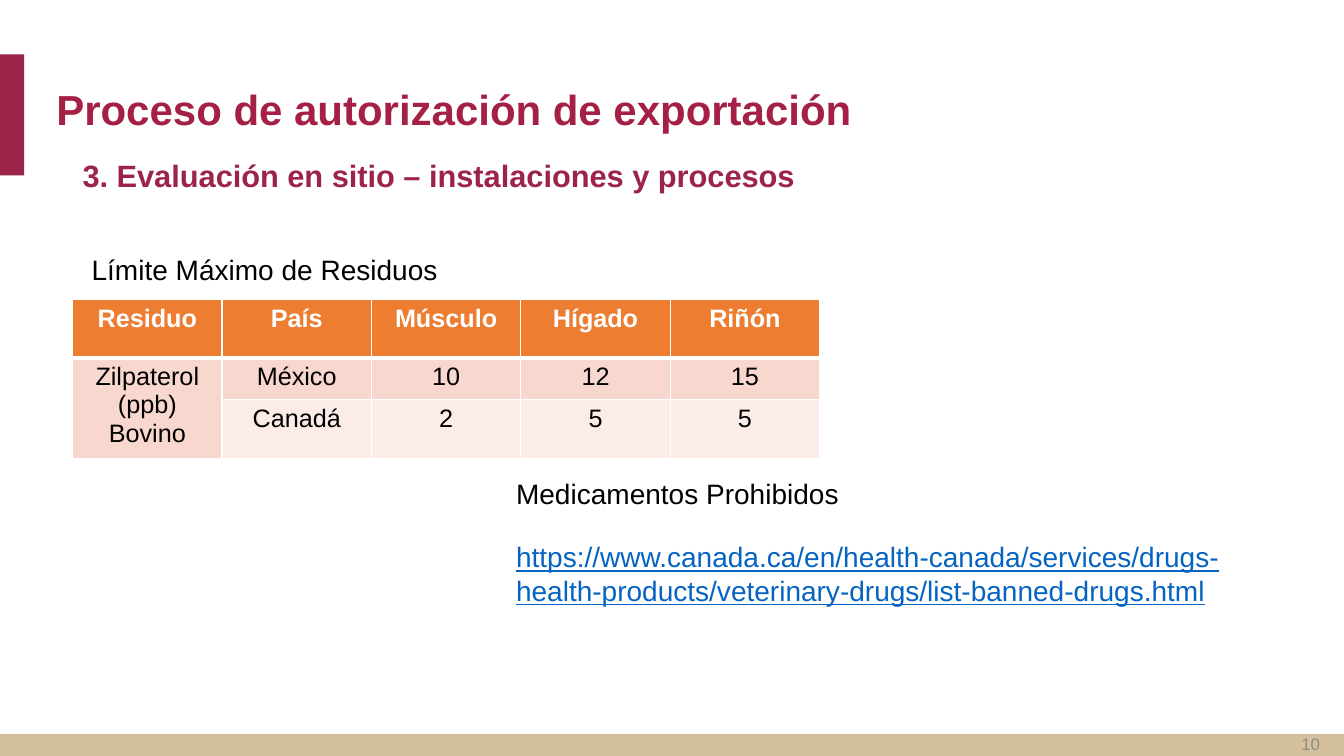
from lxml import etree
from pptx import Presentation
from pptx import util as u
from pptx.dml.color import RGBColor
from pptx.enum import shapes, text
from pptx.oxml.ns import qn

WIDTH, HEIGHT = 13.33, 7.5
FONT = "Arial"
WINE = RGBColor(0x9D, 0x24, 0x49)
TITLE_WINE = RGBColor(0xA4, 0x21, 0x45)
SAND = RGBColor(0xD4, 0xC1, 0x9C)
GRAY = RGBColor(0x8C, 0x8C, 0x8C)
BLACK = RGBColor(0, 0, 0)
WHITE = RGBColor(0xFF, 0xFF, 0xFF)
ORANGE = RGBColor(0xED, 0x7D, 0x31)
PEACH = RGBColor(0xF8, 0xD7, 0xCE)
PALE_PEACH = RGBColor(0xFC, 0xEC, 0xE8)
LINK_BLUE = RGBColor(0x05, 0x63, 0xC1)

LEFT, RIGHT = text.PP_ALIGN.LEFT, text.PP_ALIGN.RIGHT
TOP, MIDDLE = text.MSO_ANCHOR.TOP, text.MSO_ANCHOR.MIDDLE

BANDS = [
    ((0, 7.28, WIDTH, 0.22), SAND),
    ((0, 0.54, 0.24, 1.2), WINE),
]
LINK = ("https://www.canada.ca/en/health-canada/services/"
        "drugs-health-products/veterinary-drugs/list-banned-drugs.html")
TEXTS = [
    ((0.72, 1.55, 12.08, 0.64), ["3. Evaluación en sitio – instalaciones y procesos"],
     22, WINE, True, 0.9, LEFT, TOP),
    ((0.46, 0.54, 10.08, 1.14), ["Proceso de autorización de exportación"],
     30, TITLE_WINE, True, 0.9, LEFT, MIDDLE),
    ((10.19, 7.18, 3, 0.4), ["10"], 12, GRAY, False, 1.0, RIGHT, MIDDLE),
    ((0.81, 2.46, 4.21, 0.44), ["Límite Máximo de Residuos"],
     20, BLACK, False, 1.0, LEFT, TOP),
    ((5.02, 4.68, 7.34, 1.72), ["Medicamentos Prohibidos", LINK],
     20, BLACK, False, 1.0, LEFT, TOP),
]
TABLE_LEFT, TABLE_TOP, TABLE_WIDTH = 0.72, 2.97, 7.41
ROWS = [
    (0.58, ORANGE, ["Residuo", "País", "Músculo", "Hígado", "Riñón"]),
    (0.41, PEACH, ["Zilpaterol (ppb)\nBovino", "México", "10", "12", "15"]),
    (0.59, PALE_PEACH, ["", "Canadá", "2", "5", "5"]),
]


def inches(box):
    return [u.Inches(length) for length in box]


def style(font, size, color, bold):
    font.name, font.size, font.bold = FONT, u.Pt(size), bold
    font.color.rgb = color


def add_band(slide, box, color):
    shape = slide.shapes.add_shape(shapes.MSO_SHAPE.RECTANGLE, *inches(box))
    shape.shadow.inherit = False
    shape.fill.solid()
    shape.fill.fore_color.rgb = color
    shape.line.fill.background()


def add_text(slide, box, lines, size, color, bold, spacing, alignment, anchor):
    frame = slide.shapes.add_textbox(*inches(box)).text_frame
    frame.word_wrap = True
    frame.vertical_anchor = anchor
    frame.text = "\n".join(lines)
    for index, paragraph in enumerate(frame.paragraphs):
        paragraph.alignment = alignment
        paragraph.line_spacing = spacing
        if index:
            paragraph.space_before = u.Pt(21)
        for run in paragraph.runs:
            is_link = run.text == LINK
            style(run.font, size, LINK_BLUE if is_link else color, bold)
            run.font.underline = is_link


def add_borders(cell, bottom_width):
    properties = cell._tc.get_or_add_tcPr()
    widths = {"a:lnL": 1, "a:lnR": 1, "a:lnT": 1, "a:lnB": bottom_width}
    for index, (tag, width) in enumerate(widths.items()):
        border = etree.Element(qn(tag), w=str(u.Pt(width)))
        fill = etree.SubElement(border, qn("a:solidFill"))
        etree.SubElement(fill, qn("a:srgbClr"), val=str(WHITE))
        properties.insert(index, border)


def add_residue_table(slide):
    columns = len(ROWS[0][2])
    height = sum(row[0] for row in ROWS)
    box = inches((TABLE_LEFT, TABLE_TOP, TABLE_WIDTH, height))
    table = slide.shapes.add_table(len(ROWS), columns, *box).table
    for column in table.columns:
        column.width = u.Inches(TABLE_WIDTH / columns)
    for row_index, (row_height, color, values) in enumerate(ROWS):
        header = row_index == 0
        table.rows[row_index].height = u.Inches(row_height)
        for column_index, value in enumerate(values):
            cell = table.cell(row_index, column_index)
            cell.text = value
            cell.fill.solid()
            cell.fill.fore_color.rgb = color
            add_borders(cell, 3 if header else 1)
            for paragraph in cell.text_frame.paragraphs:
                paragraph.alignment = text.PP_ALIGN.CENTER
                style(paragraph.font, 18, WHITE if header else BLACK, header)
                for run in paragraph.runs:
                    style(run.font, 18, WHITE if header else BLACK, header)
    table.cell(1, 0).merge(table.cell(2, 0))


def main():
    presentation = Presentation()
    presentation.slide_width = u.Inches(WIDTH)
    presentation.slide_height = u.Inches(HEIGHT)
    slide = presentation.slides.add_slide(presentation.slide_layouts[6])
    for band in BANDS:
        add_band(slide, *band)
    for entry in TEXTS:
        add_text(slide, *entry)
    add_residue_table(slide)
    presentation.save("out.pptx")


if __name__ == "__main__":
    main()
